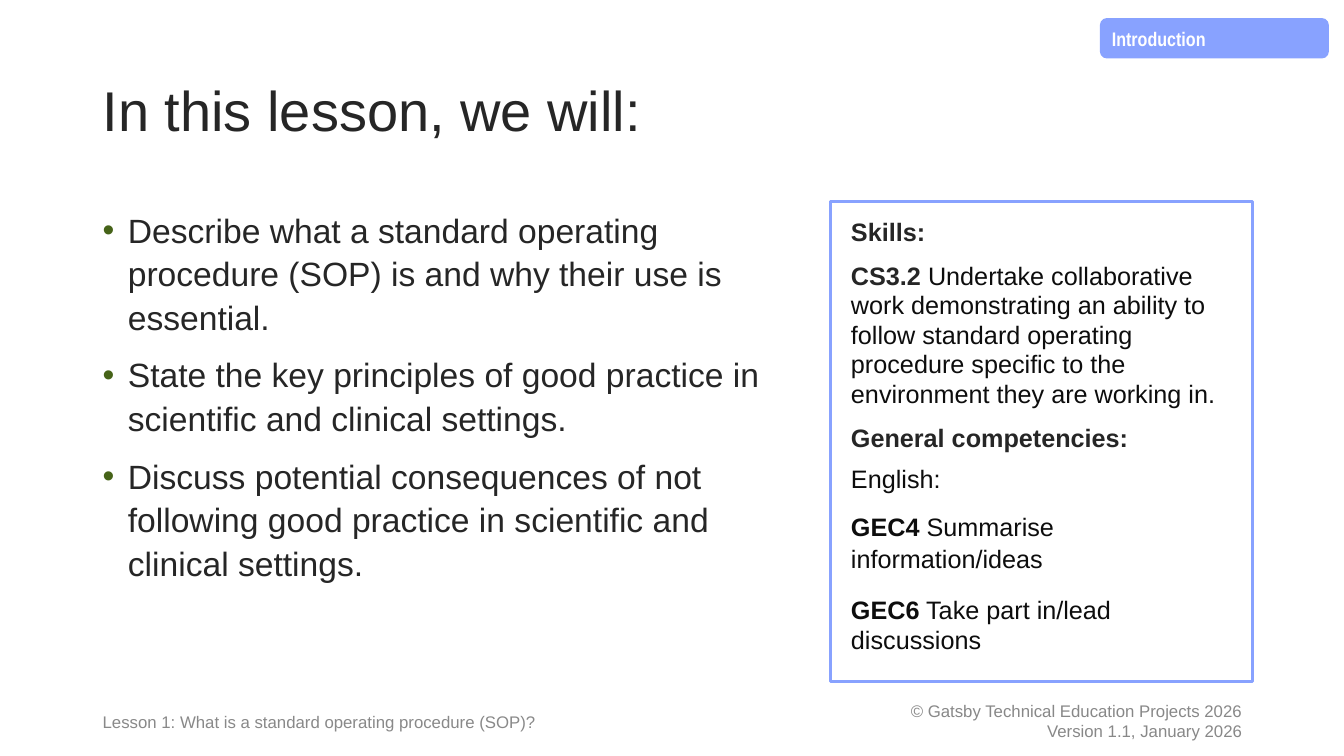
from lxml import etree
from pptx import Presentation
from pptx.dml.color import RGBColor
from pptx.enum.shapes import MSO_SHAPE
from pptx.enum.text import MSO_ANCHOR, PP_ALIGN
from pptx.oxml.ns import qn
from pptx.util import Inches, Pt

TOP, MIDDLE = MSO_ANCHOR.TOP, MSO_ANCHOR.MIDDLE
LEFT, RIGHT = PP_ALIGN.LEFT, PP_ALIGN.RIGHT
TAG, RECT = MSO_SHAPE.FLOWCHART_ALTERNATE_PROCESS, MSO_SHAPE.RECTANGLE
BLUE, DARK, BLACK, WHITE = "88A2FF", "262626", "0D0D0D", "FFFFFF"
EDGE, BODY_TOP, BODY_HIGH = 0.92, 2, 4.76
FOOT_TOP, FOOT_HIGH = 6.95, 0.4


def color(code):
    return RGBColor.from_string(code)


def write(shape, paras, size, face="Arial", anchor=TOP, align=LEFT, inset=(0.1, 0.05)):
    """Each paragraph is (line spacing, space before, [(text, colour, bold), ...])."""
    frame = shape.text_frame
    frame.word_wrap = True
    frame.vertical_anchor = anchor
    frame.margin_left = frame.margin_right = Inches(inset[0])
    frame.margin_top = frame.margin_bottom = Inches(inset[1])
    for i, (line, before, runs) in enumerate(paras):
        para = frame.add_paragraph() if i else frame.paragraphs[0]
        para.alignment = align
        para.line_spacing = line
        if before:
            para.space_before = Pt(before)
        for text, code, bold in runs:
            run = para.add_run()
            run.text = text
            run.font.size = Pt(size)
            run.font.name = face
            run.font.bold = bold
            run.font.color.rgb = color(code)


deck = Presentation()
deck.slide_width, deck.slide_height = Inches(13.33), Inches(7.5)
slide = deck.slides.add_slide(deck.slide_layouts[6])
shapes = slide.shapes

# Footer
rights = shapes.add_textbox(Inches(7.92), Inches(FOOT_TOP), Inches(4.5), Inches(FOOT_HIGH))
write(rights, [
    (1.0, 0, [("© Gatsby Technical Education Projects 2026", "888888", False)]),
    (1.0, 0, [("Version 1.1, January 2026", "888888", False)]),
], 12, anchor=MIDDLE, align=RIGHT)
lesson = shapes.add_textbox(Inches(EDGE), Inches(FOOT_TOP), Inches(4.6), Inches(FOOT_HIGH))
write(lesson, [
    (1.08, 0, [("Lesson 1: What is a standard operating procedure (SOP)?", "898989", False)]),
], 12, anchor=MIDDLE)

# Section tag
tag = shapes.add_shape(TAG, Inches(10.91), Inches(0.18), Inches(2.27), Inches(0.4))
tag.shadow.inherit = False
tag.fill.solid()
tag.fill.fore_color.rgb = color(BLUE)
tag.line.fill.background()
write(tag, [(1.08, 0, [("Introduction", WHITE, True)])], 14, face="Arial Narrow")

# Title
title = shapes.add_textbox(Inches(EDGE), Inches(0.4), Inches(11.5), Inches(1.45))
write(title, [(0.9, 0, [("In this lesson, we will:", DARK, False)])], 40, anchor=MIDDLE)

# Lesson aims
aims = [
    "Describe what a standard operating procedure (SOP) is and why their use is essential.",
    "State the key principles of good practice in scientific and clinical settings.",
    "Discuss potential consequences of not following good practice in scientific and clinical settings.",
]
body = shapes.add_textbox(Inches(EDGE), Inches(BODY_TOP), Inches(7), Inches(BODY_HIGH))
write(body, [(1.08, 10 if i else 0, [(aim, DARK, False)]) for i, aim in enumerate(aims)], 24)
for para in body.text_frame.paragraphs:
    props = para._p.get_or_add_pPr()
    props.set("marL", str(Inches(0.25)))
    props.set("indent", str(-Inches(0.25)))
    tint = etree.SubElement(props, qn("a:buClr"))
    etree.SubElement(tint, qn("a:srgbClr")).set("val", "466318")
    etree.SubElement(props, qn("a:buFont")).set("typeface", "Arial")
    etree.SubElement(props, qn("a:buChar")).set("char", "•")

# Skills panel
panel = shapes.add_shape(RECT, Inches(8.24), Inches(BODY_TOP), Inches(4.18), Inches(BODY_HIGH))
panel.shadow.inherit = False
panel.fill.solid()
panel.fill.fore_color.rgb = color(WHITE)
panel.line.color.rgb = color(BLUE)
panel.line.width = Pt(2.25)
write(panel, [
    (0.98, 0, [("Skills:", DARK, True)]),
    (0.98, 10, [
        ("CS3.2 ", DARK, True),
        ("Undertake collaborative work demonstrating an ability to follow standard operating "
         "procedure specific to the environment they are working in.", BLACK, False),
    ]),
    (0.98, 10, [("General competencies:", DARK, True)]),
    (1.05, 6, [("English:", BLACK, False)]),
    (1.05, 12, [("GEC4", BLACK, True), (" Summarise information/ideas", BLACK, False)]),
    (0.98, 16, [("GEC6", BLACK, True), (" Take part in/lead discussions", BLACK, False)]),
], 18, inset=(0.2, 0.16))

deck.save("out.pptx")
